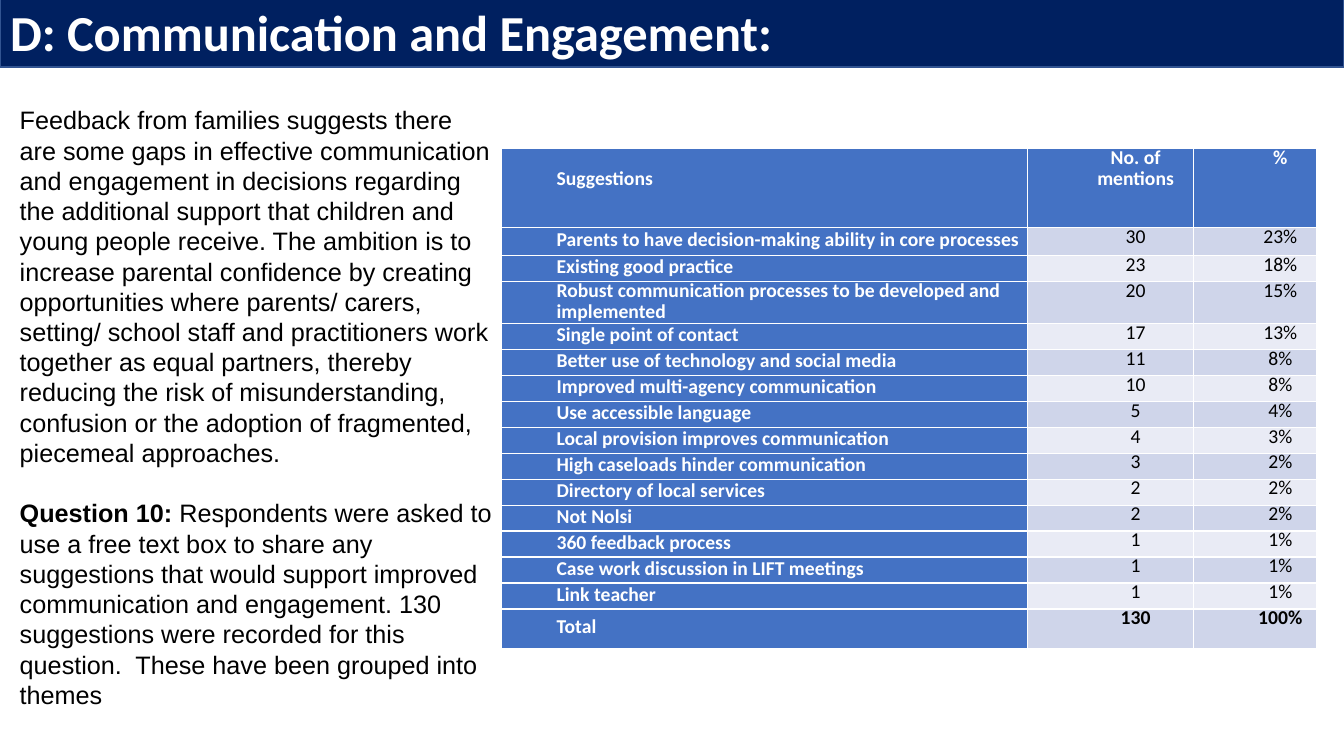
from pptx import Presentation
from pptx.dml.color import RGBColor
from pptx.enum.text import MSO_ANCHOR, MSO_AUTO_SIZE, PP_ALIGN
from pptx.util import Pt


def paint(fill, tint):
    fill.solid()
    fill.fore_color.rgb = RGBColor.from_string(tint)


def write(para, text, face, size, tint, bold):
    run = para.add_run()
    run.text = text
    run.font.name = face
    run.font.size = Pt(size)
    run.font.bold = bold
    paint(run.font.fill, tint)


deck = Presentation()
deck.slide_width, deck.slide_height = Pt(960), Pt(540)
slide = deck.slides.add_slide(deck.slide_layouts[5])

title = slide.shapes.title
title.left, title.top, title.width, title.height = Pt(0), Pt(-3), Pt(960), Pt(51)
paint(title.fill, "002060")
paint(title.line.fill, "325491")
title.line.width = Pt(1)
frame = title.text_frame
frame.vertical_anchor = MSO_ANCHOR.MIDDLE
frame.auto_size = MSO_AUTO_SIZE.NONE
frame.paragraphs[0].alignment = PP_ALIGN.LEFT
write(frame.paragraphs[0], "D: Communication and Engagement:", "Calibri", 36, "FFFFFF", True)

rows = [
    ("Suggestions", "No. of mentions", "%"),
    ("Parents to have decision-making ability in core processes", "30", "23%"),
    ("Existing good practice", "23", "18%"),
    ("Robust communication processes to be developed and implemented", "20", "15%"),
    ("Single point of contact", "17", "13%"),
    ("Better use of technology and social media", "11", "8%"),
    ("Improved multi-agency communication", "10", "8%"),
    ("Use accessible language", "5", "4%"),
    ("Local provision improves communication", "4", "3%"),
    ("High caseloads hinder communication", "3", "2%"),
    ("Directory of local services", "2", "2%"),
    ("Not Nolsi", "2", "2%"),
    ("360 feedback process", "1", "1%"),
    ("Case work discussion in LIFT meetings", "1", "1%"),
    ("Link teacher", "1", "1%"),
    ("Total", "130", "100%"),
]
last = len(rows) - 1
highs = {0: 56.5, 1: 20, 3: 30, last: 28}
table = slide.shapes.add_table(len(rows), 3, Pt(358), Pt(106), Pt(582.5), Pt(356)).table
table.first_col = True
for col, width in zip(table.columns, (375.8, 118.8, 87.9)):
    col.width = Pt(width)

for r, row in enumerate(rows):
    table.rows[r].height = Pt(highs.get(r, 18.55))
    for c, text in enumerate(row):
        cell = table.cell(r, c)
        cell.margin_left = cell.margin_right = Pt(3.6)
        cell.margin_top = Pt(15 if r == c == 0 else 0)
        cell.margin_bottom = Pt(0)
        cell.vertical_anchor = MSO_ANCHOR.MIDDLE if r and c == 0 else MSO_ANCHOR.TOP
        head = r == 0 or c == 0
        paint(cell.fill, "4472C4" if head else "CFD5EA" if r % 2 else "E9EBF5")
        para = cell.text_frame.paragraphs[0]
        para.alignment = PP_ALIGN.CENTER if c else PP_ALIGN.LEFT
        para.line_spacing = Pt(15)
        props = para._p.get_or_add_pPr()
        props.set("marL", str(Pt(36)))
        props.set("indent", "0")
        write(para, text, "Calibri", 14, "FFFFFF" if head else "000000", head or r == last)

notes = [
    [("Feedback from families suggests there are some gaps in effective communication "
      "and engagement in decisions regarding the additional support that children and "
      "young people receive. The ambition is to increase parental confidence by creating "
      "opportunities where parents/ carers, setting/ school staff and practitioners work "
      "together as equal partners, thereby reducing the risk of misunderstanding, "
      "confusion or the adoption of fragmented, piecemeal approaches.", False)],
    [("Question 10:", True),
     (" Respondents were asked to use a free text box to share any suggestions that would "
      "support improved communication and engagement. 130 suggestions were recorded for "
      "this question.  These have been grouped into themes", False)],
]
box = slide.shapes.add_textbox(Pt(7), Pt(69), Pt(351.4), Pt(443.5))
frame = box.text_frame
frame.word_wrap = True
frame.auto_size = MSO_AUTO_SIZE.SHAPE_TO_FIT_TEXT
frame.vertical_anchor = MSO_ANCHOR.MIDDLE
for n, runs in enumerate(notes):
    para = frame.add_paragraph() if n else frame.paragraphs[0]
    para.space_before = Pt(21.6 if n else 0)
    for text, bold in runs:
        write(para, text, "Arial", 18, "000000", bold)

deck.save("out.pptx")
